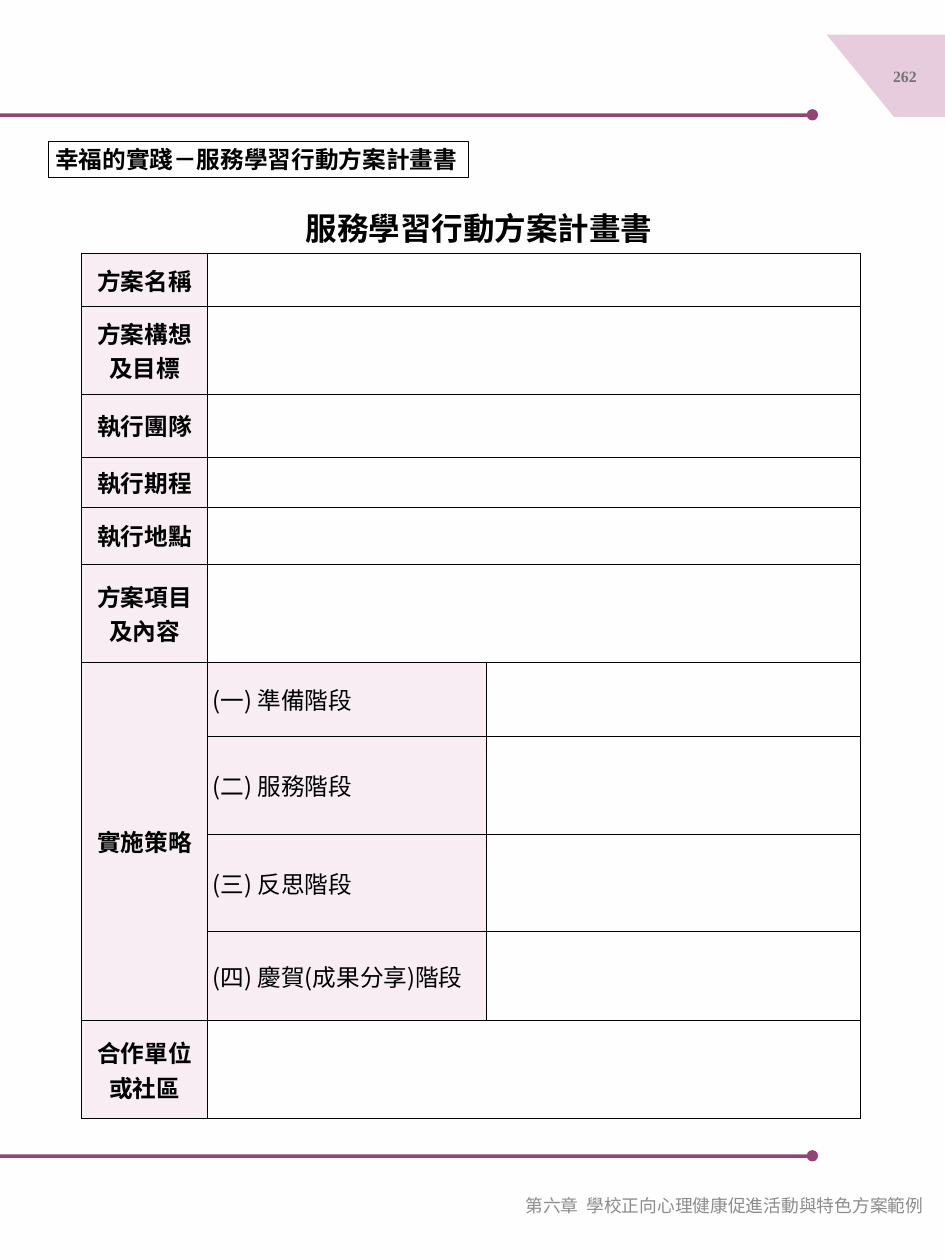
from pptx import Presentation
from pptx.dml.color import RGBColor
from pptx.enum.shapes import MSO_SHAPE as Shape
from pptx.enum.text import MSO_ANCHOR as Anchor, MSO_AUTO_SIZE as AutoSize, PP_ALIGN as Align
from pptx.oxml.ns import qn
from pptx.util import Inches, Pt
from lxml.etree import SubElement

HEADING = "幸福的實踐－服務學習行動方案計畫書"
TITLE = "服務學習行動方案計畫書"
PAGE_NUMBER = "262"
CHAPTER = "第六章  學校正向心理健康促進活動與特色方案範例"
ROWS = [
    ("方案名稱", "", 0.74),
    ("方案構想及目標", "", 1.24),
    ("執行團隊", "", 0.89),
    ("執行期程", "", 0.71),
    ("執行地點", "", 0.8),
    ("方案項目及內容", "", 1.39),
    ("實施策略", "(一) 準備階段", 1.04),
    ("", "(二) 服務階段", 1.38),
    ("", "(三) 反思階段", 1.38),
    ("", "(四) 慶賀(成果分享)階段", 1.25),
    ("合作單位或社區", "", 1.39),
]
COLUMN_WIDTHS = [1.78, 3.93, 5.28]
RULE_TOPS = [1.6, 16.29]
CORNER = [(13.41, 0.49), (11.66, 0.49), (12.61, 1.65), (13.41, 1.65)]
SERIF, SANS = "Times New Roman", "Noto Sans CJK SC"
BLACK, PLUM, PINK, PALE = "000000", "924474", "E7CCDD", "F7EDF3"


def color(value):
    return RGBColor.from_string(value)


def paint(shape, fill):
    shape.shadow.inherit = False
    shape.fill.solid()
    shape.fill.fore_color.rgb = color(fill)
    shape.line.fill.background()


def write(frame, text, size, font=SERIF, ink=BLACK, bold=True, align=Align.LEFT):
    paragraph = frame.paragraphs[0]
    paragraph.alignment = align
    run = paragraph.add_run()
    run.text = text
    run.font.size = Pt(size)
    run.font.name = font
    run.font.bold = bold
    run.font.color.rgb = color(ink)
    SubElement(run.font._element, qn("a:ea"), typeface=SANS)
    return paragraph


def add_text(slide, box, text, size, wrap=True, anchor=Anchor.MIDDLE, **style):
    shape = slide.shapes.add_textbox(*map(Inches, box))
    frame = shape.text_frame
    frame.word_wrap = wrap
    frame.vertical_anchor = anchor
    write(frame, text, size, **style)
    return shape


def add_border(cell):
    properties = cell._tc.get_or_add_tcPr()
    for position, side in enumerate(("a:lnL", "a:lnR", "a:lnT", "a:lnB")):
        line = properties.makeelement(qn(side), {"w": str(Pt(1))})
        fill = SubElement(line, qn("a:solidFill"))
        SubElement(fill, qn("a:srgbClr"), val=BLACK)
        properties.insert(position, line)


def add_frame(slide):
    for top in RULE_TOPS:
        parts = [
            (Shape.RECTANGLE, -0.03, top, 11.42, 0.05),
            (Shape.OVAL, 11.38, top - 0.06, 0.16, 0.16),
        ]
        for kind, *box in parts:
            paint(slide.shapes.add_shape(kind, *map(Inches, box)), PLUM)
    points = [(Inches(x), Inches(y)) for x, y in CORNER]
    builder = slide.shapes.build_freeform(*points[0])
    builder.add_line_segments(points[1:], close=True)
    paint(builder.convert_to_shape(), PINK)
    add_text(slide, (12.41, 0.6, 0.71, 0.95), PAGE_NUMBER, 16,
             ink="767171", align=Align.CENTER)
    add_text(slide, (6.43, 16.73, 6.69, 0.57), CHAPTER, 18,
             ink="8C8C8C", bold=False, align=Align.RIGHT)


def add_titles(slide):
    heading = add_text(slide, (0.68, 2, 5.92, 0.5), HEADING, 24,
                       wrap=False, anchor=Anchor.TOP)
    heading.line.color.rgb = color(BLACK)
    heading.line.width = Pt(0.75)
    title = slide.shapes.title
    title.left, title.top, title.width, title.height = map(Inches, (4.19, 2.63, 5.14, 0.81))
    frame = title.text_frame
    frame.word_wrap = False
    frame.auto_size = AutoSize.NONE
    frame.vertical_anchor = Anchor.TOP
    write(frame, TITLE, 32, align=Align.CENTER).line_spacing = 1.5


def add_plan(slide):
    heights = [height for *_, height in ROWS]
    box = (1.15, 3.58, sum(COLUMN_WIDTHS), sum(heights))
    table = slide.shapes.add_table(len(ROWS), len(COLUMN_WIDTHS), *map(Inches, box)).table
    table.first_row = table.horz_banding = False
    for column, width in zip(table.columns, COLUMN_WIDTHS):
        column.width = Inches(width)
    for index, (label, stage, height) in enumerate(ROWS):
        table.rows[index].height = Inches(height)
        for column, text in enumerate((label, stage, "")):
            cell = table.cell(index, column)
            cell.margin_left = cell.margin_right = Inches(0.07)
            cell.margin_top = cell.margin_bottom = 0
            cell.vertical_anchor = Anchor.MIDDLE
            if text or column == 0:
                cell.fill.solid()
                cell.fill.fore_color.rgb = color(PALE)
            else:
                cell.fill.background()
            if text:
                is_label = column == 0
                write(cell.text_frame, text, 24, font=SANS, bold=is_label,
                      align=Align.CENTER if is_label else Align.LEFT)
            add_border(cell)
        if not stage:
            table.cell(index, 1).merge(table.cell(index, 2))
    stages = [index for index, row in enumerate(ROWS) if row[1]]
    table.cell(stages[0], 0).merge(table.cell(stages[-1], 0))


def main():
    presentation = Presentation()
    presentation.slide_width = Inches(13.33)
    presentation.slide_height = Inches(17.78)
    slide = presentation.slides.add_slide(presentation.slide_layouts[5])
    slide.background.fill.solid()
    slide.background.fill.fore_color.rgb = color("FEFEFE")
    add_frame(slide)
    add_titles(slide)
    add_plan(slide)
    presentation.save("out.pptx")


if __name__ == "__main__":
    main()
